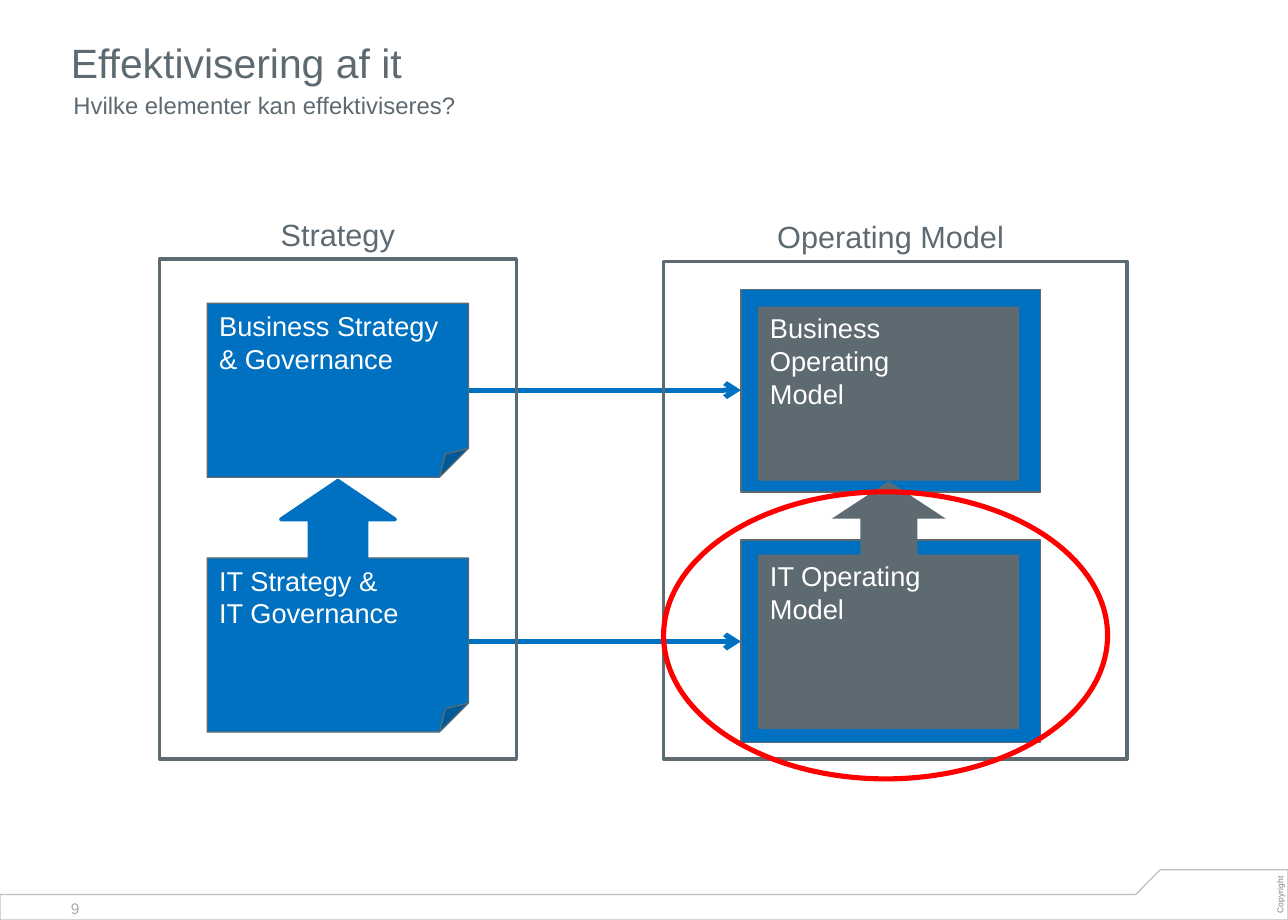
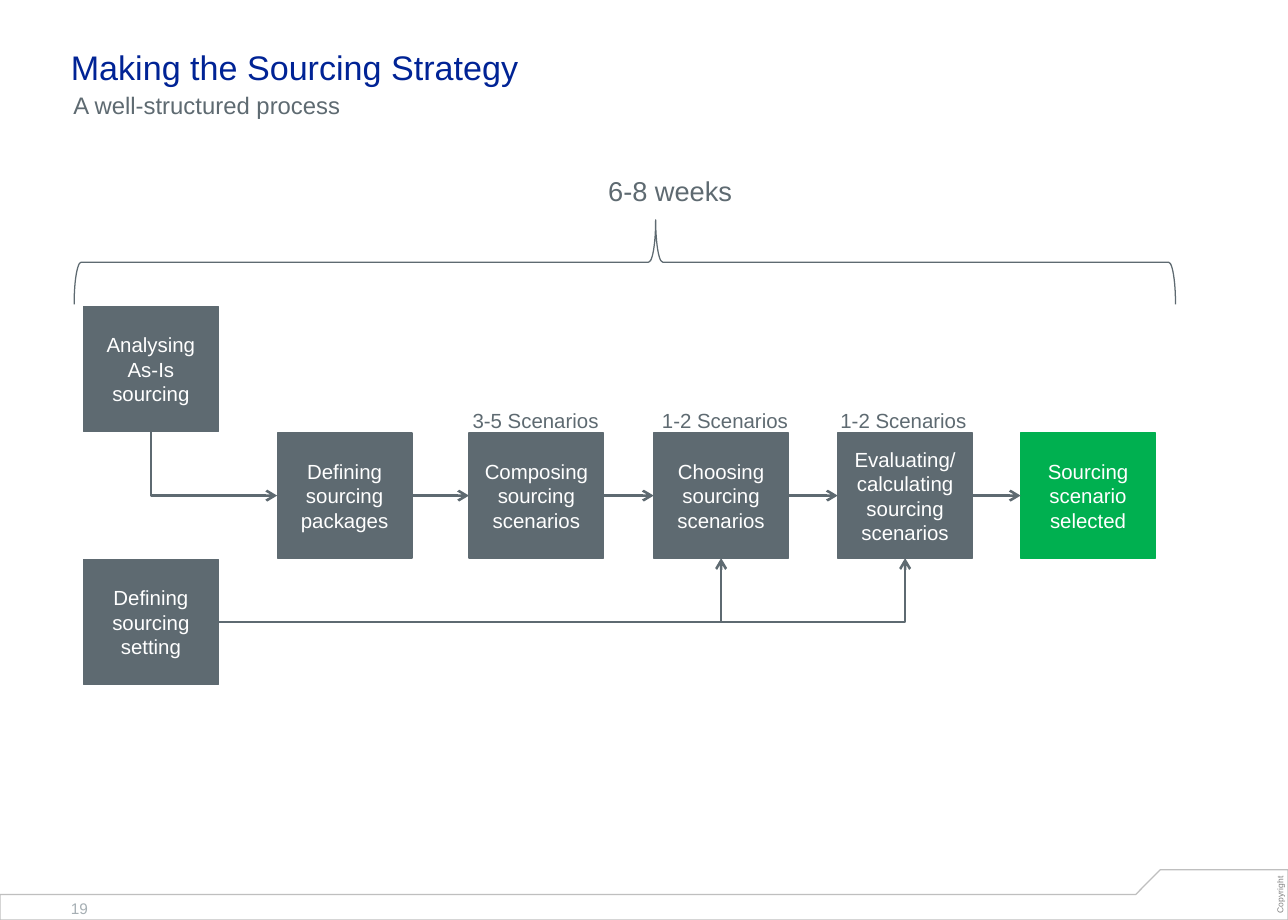
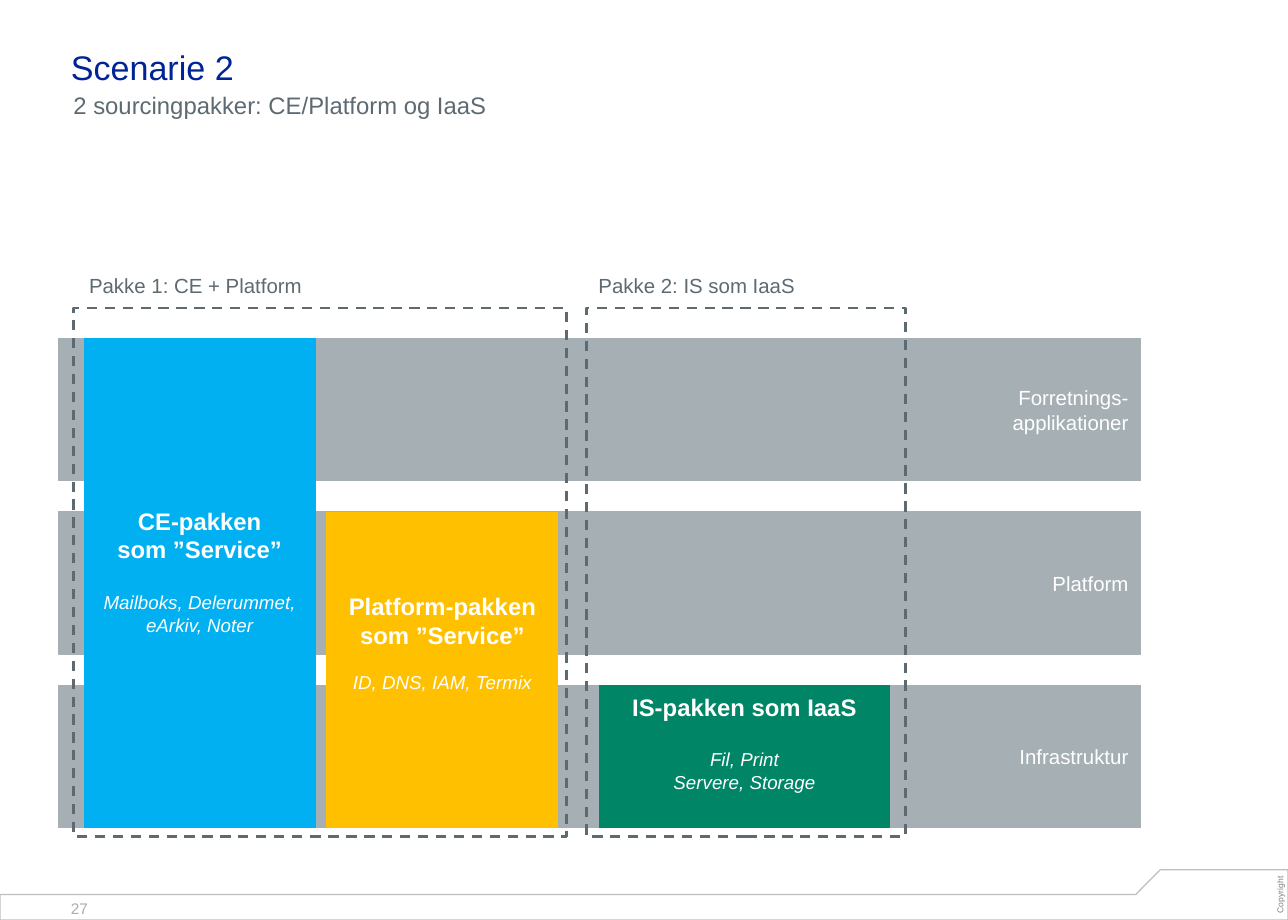
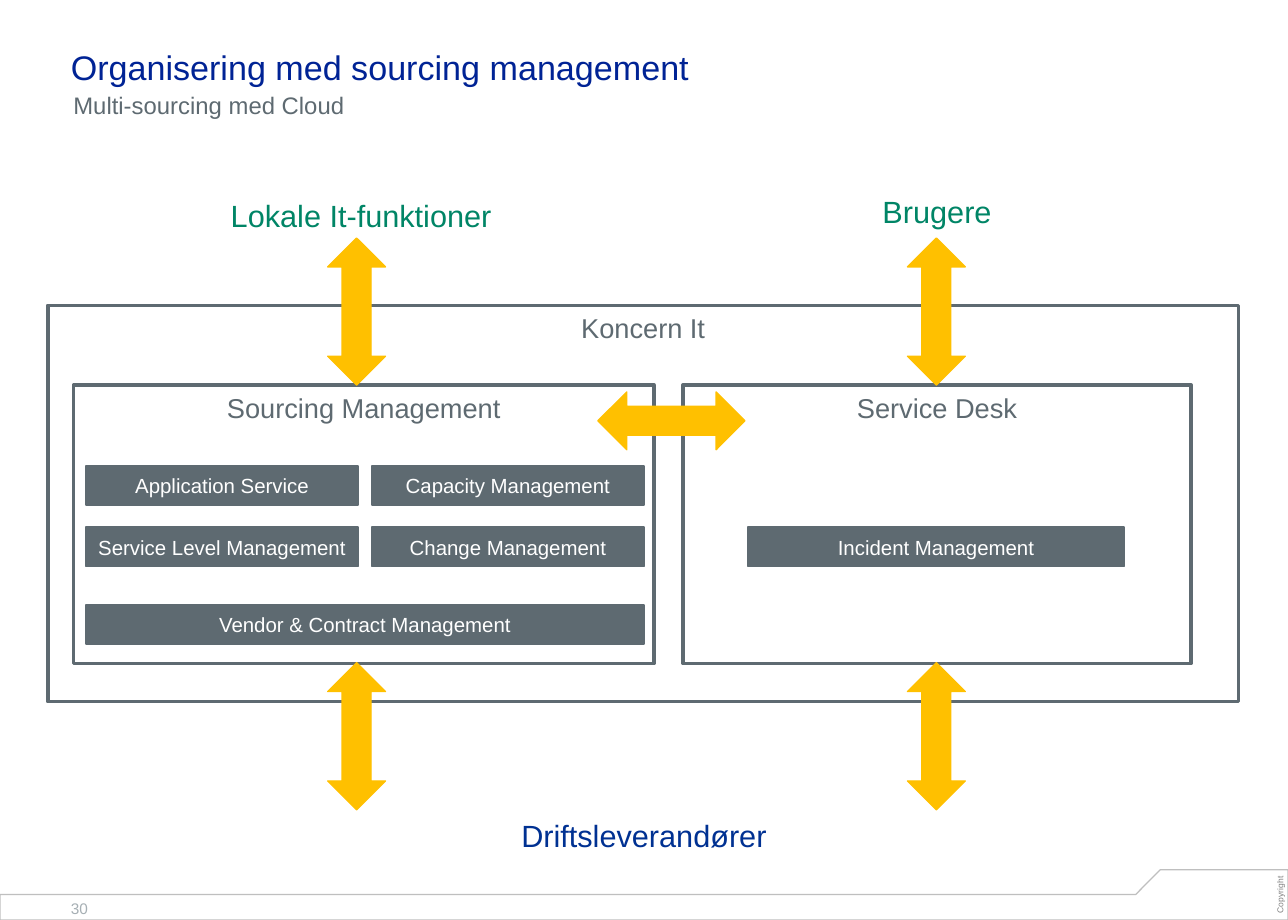
from dataclasses import dataclass

from lxml.etree import SubElement
from pptx import Presentation
from pptx.dml.color import RGBColor
from pptx.enum.dml import MSO_LINE
from pptx.enum.shapes import MSO_CONNECTOR, MSO_SHAPE
from pptx.enum.text import MSO_ANCHOR, PP_ALIGN
from pptx.oxml.ns import qn
from pptx.util import Pt


@dataclass(frozen=True)
class Theme:
    font: str = "Arial"
    slate: str = "5E6A71"
    mist: str = "A6AFB4"
    navy: str = "002395"
    supplier: str = "003192"
    blue: str = "0070C0"
    sky: str = "00B0F0"
    amber: str = "FFC000"
    teal: str = "008566"
    green: str = "00B050"
    red: str = "FF0000"
    white: str = "FFFFFF"
    footer_line: str = "BFBFBF"
    copyright: str = "808080"
    title: int = 20
    title_large: int = 24
    heading: int = 18
    panel: int = 16
    subtitle: int = 14
    label: int = 12
    detail: int = 11
    page: int = 9
    tiny: int = 5


THEME = Theme()


@dataclass(frozen=True)
class Box:
    left: float
    top: float
    width: float
    height: float

    def inside(self, dx, dy, width, height):
        return Box(self.left + dx, self.top + dy, width, height)

    def turned(self):
        return Box(self.center - self.height / 2, self.middle - self.width / 2,
                   self.height, self.width)

    def lengths(self):
        return [Pt(v) for v in (self.left, self.top, self.width, self.height)]

    @property
    def center(self):
        return self.left + self.width / 2

    @property
    def middle(self):
        return self.top + self.height / 2

    @property
    def right(self):
        return self.left + self.width

    @property
    def bottom(self):
        return self.top + self.height


SLIDE = Box(0, 0, 756, 540)


def write_text(shape, text, size=THEME.label, color=THEME.white, align=PP_ALIGN.LEFT,
               anchor=MSO_ANCHOR.TOP, insets=(7.2, 3.6, 7.2, 3.6), bold=False,
               italic=False, gap=0):
    frame = shape.text_frame
    frame.word_wrap = True
    frame.vertical_anchor = anchor
    (frame.margin_left, frame.margin_top,
     frame.margin_right, frame.margin_bottom) = [Pt(v) for v in insets]
    for index, line in enumerate(text.split("\n")):
        paragraph = frame.add_paragraph() if frame.text else frame.paragraphs[0]
        paragraph.alignment = align
        if gap and index == 0:
            paragraph.space_before = Pt(gap)
        run = paragraph.add_run()
        run.text = line
        font = run.font
        font.name, font.size = THEME.font, Pt(size)
        font.bold, font.italic = bold, italic
        font.color.rgb = RGBColor.from_string(color)


def add_label(slide, box, text, turn=0, **style):
    label = slide.shapes.add_textbox(*(box.turned() if turn else box).lengths())
    label.rotation = turn
    write_text(label, text, **style)


def paint(shape, fill=None, line=None, weight=0.75, dashed=False):
    shape.shadow.inherit = False
    if fill:
        shape.fill.solid()
        shape.fill.fore_color.rgb = RGBColor.from_string(fill)
    else:
        shape.fill.background()
    if line:
        shape.line.color.rgb = RGBColor.from_string(line)
        shape.line.width = Pt(weight)
        if dashed:
            shape.line.dash_style = MSO_LINE.DASH
    else:
        shape.line.fill.background()


def add_figure(slide, box, kind=MSO_SHAPE.RECTANGLE, turn=0, **look):
    figure = slide.shapes.add_shape(kind, *(box.turned() if turn else box).lengths())
    figure.rotation = turn
    paint(figure, **look)
    return figure


def add_arrow(slide, start, end, color=THEME.slate, weight=1.5, bend=None):
    (x1, y1), (x2, y2) = start, end
    if bend == "down":
        x, y = (x1 + x2) / 2, (y1 + y2) / 2
        half_w, half_h = (y2 - y1) / 2, (x2 - x1) / 2
        x1, y1, x2, y2 = x + half_w, y - half_h, x - half_w, y + half_h
    kind = MSO_CONNECTOR.ELBOW if bend else MSO_CONNECTOR.STRAIGHT
    arrow = slide.shapes.add_connector(kind, Pt(x1), Pt(y1), Pt(x2), Pt(y2))
    arrow.line.color.rgb = RGBColor.from_string(color)
    arrow.line.width = Pt(weight)
    properties = arrow._element.spPr
    if bend:
        properties.find(qn("a:prstGeom")).set("prst", "bentConnector2")
    if bend == "down":
        properties.find(qn("a:xfrm")).set("rot", "16200000")
    SubElement(properties.find(qn("a:ln")), qn("a:tailEnd"), type="arrow")
    SubElement(properties, qn("a:effectLst"))


def add_footer(slide, box, page):
    points = [(0, 14.5), (666.7, 14.5), (681, 0), (box.width, 0),
              (box.width, box.height), (0, box.height)]
    corners = [(Pt(box.left + x), Pt(box.top + y)) for x, y in points]
    builder = slide.shapes.build_freeform(*corners[0])
    builder.add_line_segments(corners[1:], close=True)
    paint(builder.convert_to_shape(), fill=THEME.white, line=THEME.footer_line)
    add_label(slide, box.inside(747, 0, 8.6, 29.5), "Copyright", turn=270,
              size=THEME.tiny, color=THEME.copyright, align=PP_ALIGN.CENTER,
              anchor=MSO_ANCHOR.MIDDLE, insets=(0, 0, 0, 0))
    add_label(slide, box.inside(34.5, 13.7, 28, 18), str(page),
              size=THEME.page, color=THEME.mist)


def add_heading(slide, box, title, subtitle, size, color):
    add_label(slide, box.inside(0, 0, box.width, 36), title, size=size, color=color,
              anchor=MSO_ANCHOR.BOTTOM, insets=(7.2, 0, 0, 0))
    add_label(slide, box.inside(0, 38, box.width, 30), subtitle, size=THEME.subtitle,
              color=THEME.slate, insets=(8.6, 0, 7.2, 0))


def start_slide(deck, page, title, subtitle, size=THEME.title, color=THEME.navy):
    slide = deck.slides.add_slide(deck.slide_layouts[6])
    add_footer(slide, SLIDE.inside(0, 510.5, SLIDE.width, 29.5), page)
    add_heading(slide, SLIDE.inside(34.5, 15, 703.5, 68), title, subtitle, size, color)
    return slide


def add_model_frame(slide, box, heading):
    add_figure(slide, box, line=THEME.slate, weight=2)
    return lambda center: add_label(
        slide, Box(center - 100, box.top - 29, 200, 29), heading,
        size=THEME.heading, color=THEME.slate, align=PP_ALIGN.CENTER)


def add_strategy(slide, box):
    place_heading = add_model_frame(slide, box, "Strategy")
    for dy, text in ((26, "Business Strategy & Governance"),
                     (175.5, "IT Strategy &\nIT Governance")):
        note_box = box.inside(28, dy, 153.4, 102.2)
        note = add_figure(slide, note_box, MSO_SHAPE.FOLDED_CORNER,
                          fill=THEME.blue, line=THEME.slate)
        write_text(note, text, size=THEME.panel)
    place_heading(note_box.center)
    add_figure(slide, box.inside(71.3, 130.2, 67, 45.4), MSO_SHAPE.UP_ARROW,
               fill=THEME.blue, line=THEME.blue, weight=2.25)


def add_operating_model(slide, box):
    place_heading = add_model_frame(slide, box, "Operating Model")
    for dy, rim, text in ((16.5, 10, "Business\nOperating\nModel"),
                          (163.5, 8.6, "IT Operating\nModel")):
        card_box = box.inside(45.4, dy, 175.7, 118.8)
        add_figure(slide, card_box, fill=THEME.blue, line=THEME.slate)
        core = add_figure(slide, card_box.inside(10, rim, 153.4, 102.2), fill=THEME.slate)
        write_text(core, text, size=THEME.panel, insets=(7.2, 2.9, 7.2, 2.9))
    place_heading(card_box.center)
    add_figure(slide, box.inside(98.7, 129, 67, 44), MSO_SHAPE.UP_ARROW, fill=THEME.slate)


def build_elements(deck):
    slide = start_slide(deck, 9, "Effektivisering af it", "Hvilke elementer kan effektiviseres?",
                        size=THEME.title_large, color=THEME.slate)
    for y in (229, 376.5):
        add_arrow(slide, (275, y), (434.9, y), color=THEME.blue, weight=3)
    add_strategy(slide, Box(93.6, 152, 209.5, 293.5))
    add_operating_model(slide, Box(389.5, 153.5, 272, 292))
    add_figure(slide, Box(389.5, 288.7, 260.6, 168.5), MSO_SHAPE.OVAL,
               line=THEME.red, weight=3)


def add_step(slide, box, text, color=THEME.slate):
    step = add_figure(slide, box, fill=color, line=color)
    write_text(step, text, align=PP_ALIGN.CENTER, anchor=MSO_ANCHOR.MIDDLE)
    return box


def add_process(slide, box):
    width, height, row = 79.2, 73.4, 74.2
    analysing = add_step(slide, box.inside(0, 0, width, height), "Analysing\nAs-Is\nsourcing")
    setting = add_step(slide, box.inside(0, 2 * row, width, height),
                       "Defining\nsourcing\nsetting")
    stages = [
        (113.7, "Defining\nsourcing\npackages", THEME.slate),
        (226.3, "Composing\nsourcing\nscenarios", THEME.slate),
        (334.7, "Choosing\nsourcing\nscenarios", THEME.slate),
        (442.7, "Evaluating/\ncalculating\nsourcing\nscenarios", THEME.slate),
        (550.1, "Sourcing\nscenario\nselected", THEME.green),
    ]
    steps = [add_step(slide, box.inside(dx, row, width, height), text, color)
             for dx, text, color in stages]
    for before, after in zip(steps, steps[1:]):
        add_arrow(slide, (before.right, before.middle), (after.left, after.middle))
    for step, shift, count in zip(steps[1:4], (-5, -2.2, -5.5), ("3-5", "1-2", "1-2")):
        add_label(slide, step.inside(shift, -18, 100, 22), f"{count} Scenarios",
                  color=THEME.slate)
    add_arrow(slide, (analysing.center, analysing.bottom),
              (steps[0].left, steps[0].middle), bend="down")
    for step in steps[2:4]:
        add_arrow(slide, (setting.right, setting.middle),
                  (step.center, step.bottom), bend="up")


def add_duration(slide, box):
    brace = add_figure(slide, box, MSO_SHAPE.RIGHT_BRACE, turn=270, line=THEME.slate)
    brace.adjustments[0], brace.adjustments[1] = 0.083, 0.528
    add_label(slide, box.inside(306.4, -30.5, 100, 24), "6-8 weeks",
              size=THEME.panel, color=THEME.slate)


def build_process(deck):
    slide = start_slide(deck, 19, "Making the Sourcing Strategy", "A well-structured process")
    add_process(slide, Box(49, 180, 629.3, 221.8))
    add_duration(slide, Box(43.5, 129, 646.5, 49.7))


def add_layers(slide, box):
    height = 83.5
    pitch = (box.height - height) / 2
    names = ("Forretnings-\napplikationer", "Platform", "Infrastruktur")
    for index, name in enumerate(names):
        layer = add_figure(slide, box.inside(0, index * pitch, box.width, height),
                           fill=THEME.mist, line=THEME.mist)
        write_text(layer, name, align=PP_ALIGN.RIGHT, anchor=MSO_ANCHOR.MIDDLE)


def add_service(slide, box, title, detail, color, gap, lift):
    style = dict(align=PP_ALIGN.CENTER, anchor=MSO_ANCHOR.MIDDLE,
                 insets=(7.2, 3.6, 7.2, 3.6 + lift))
    service = add_figure(slide, box, fill=color, line=color)
    write_text(service, title, size=THEME.subtitle, bold=True, **style)
    write_text(service, detail, size=THEME.detail, italic=True, gap=gap, **style)


def add_package(slide, box, name, shift):
    add_figure(slide, box, line=THEME.slate, weight=1.5, dashed=True)
    add_label(slide, box.inside(shift, -23.7, 160, 22), name, color=THEME.slate)


def build_scenario(deck):
    slide = start_slide(deck, 27, "Scenarie 2", "2 sourcingpakker: CE/Platform og IaaS")
    layers = Box(34.5, 198.7, 635, 287)
    add_layers(slide, layers)
    add_service(slide, layers.inside(15, 0, 135.5, 287), "CE-pakken\nsom ”Service”",
                "Mailboks, Delerummet, eArkiv, Noter", THEME.sky, gap=16, lift=13.8)
    add_service(slide, layers.inside(157.5, 102, 135.5, 185), "Platform-pakken\nsom ”Service”",
                "ID, DNS, IAM, Termix", THEME.amber, gap=12.7, lift=32.2)
    add_service(slide, layers.inside(317.5, 203.5, 170, 83.5), "IS-pakken som IaaS",
                "Fil, Print\nServere, Storage", THEME.teal, gap=16, lift=16)
    add_package(slide, Box(43.2, 180.7, 289.4, 310.3), "Pakke 1: CE + Platform", 2)
    add_package(slide, Box(344.2, 180.7, 187.2, 310.3), "Pakke 2: IS som IaaS", 0)


def add_unit(slide, box, name, tasks=()):
    unit = add_figure(slide, box, fill=THEME.white, line=THEME.slate, weight=2.25)
    write_text(unit, name, size=THEME.panel, color=THEME.slate, align=PP_ALIGN.CENTER)
    for dx, dy, width, text in tasks:
        task = add_figure(slide, box.inside(dx, dy, width, 23),
                          fill=THEME.slate, line=THEME.slate, weight=1)
        write_text(task, text, align=PP_ALIGN.CENTER, anchor=MSO_ANCHOR.MIDDLE,
                   insets=(3.6, 0, 3.6, 0))


def add_exchange(slide, box, turn=0):
    add_figure(slide, box, MSO_SHAPE.UP_DOWN_ARROW, turn=turn,
               fill=THEME.amber, line=THEME.amber)


def build_organisation(deck):
    slide = start_slide(deck, 30, "Organisering med sourcing management",
                        "Multi-sourcing med Cloud")
    add_unit(slide, Box(28, 179.3, 699, 232.5), "Koncern It")
    add_unit(slide, Box(401, 226, 298, 163.5), "Service Desk",
             [(38, 83.5, 221, "Incident Management")])
    add_unit(slide, Box(43.2, 226, 340.6, 163.5), "Sourcing Management", [
        (7.2, 47.5, 160, "Application Service"),
        (175, 47.5, 160, "Capacity Management"),
        (7.2, 83.5, 160, "Service Level Management"),
        (175, 83.5, 160, "Change Management"),
        (7.2, 129, 327.8, "Vendor & Contract Management"),
    ])
    for x in (192.3, 532.6):
        for y in (139.7, 389):
            add_exchange(slide, Box(x, y, 34, 86.4))
    add_exchange(slide, Box(350.9, 230, 86.4, 34), turn=90)
    for box, party, color in (
            (Box(112, 112.3, 200, 28), "Lokale It-funktioner", THEME.teal),
            (Box(450, 109.4, 200, 28), "Brugere", THEME.teal),
            (Box(278, 476, 200, 28), "Driftsleverandører", THEME.supplier)):
        add_label(slide, box, party, size=THEME.heading, color=color, align=PP_ALIGN.CENTER)


def main():
    deck = Presentation()
    deck.slide_width, deck.slide_height = Pt(SLIDE.width), Pt(SLIDE.height)
    for build in (build_elements, build_process, build_scenario, build_organisation):
        build(deck)
    deck.save("out.pptx")


if __name__ == "__main__":
    main()
